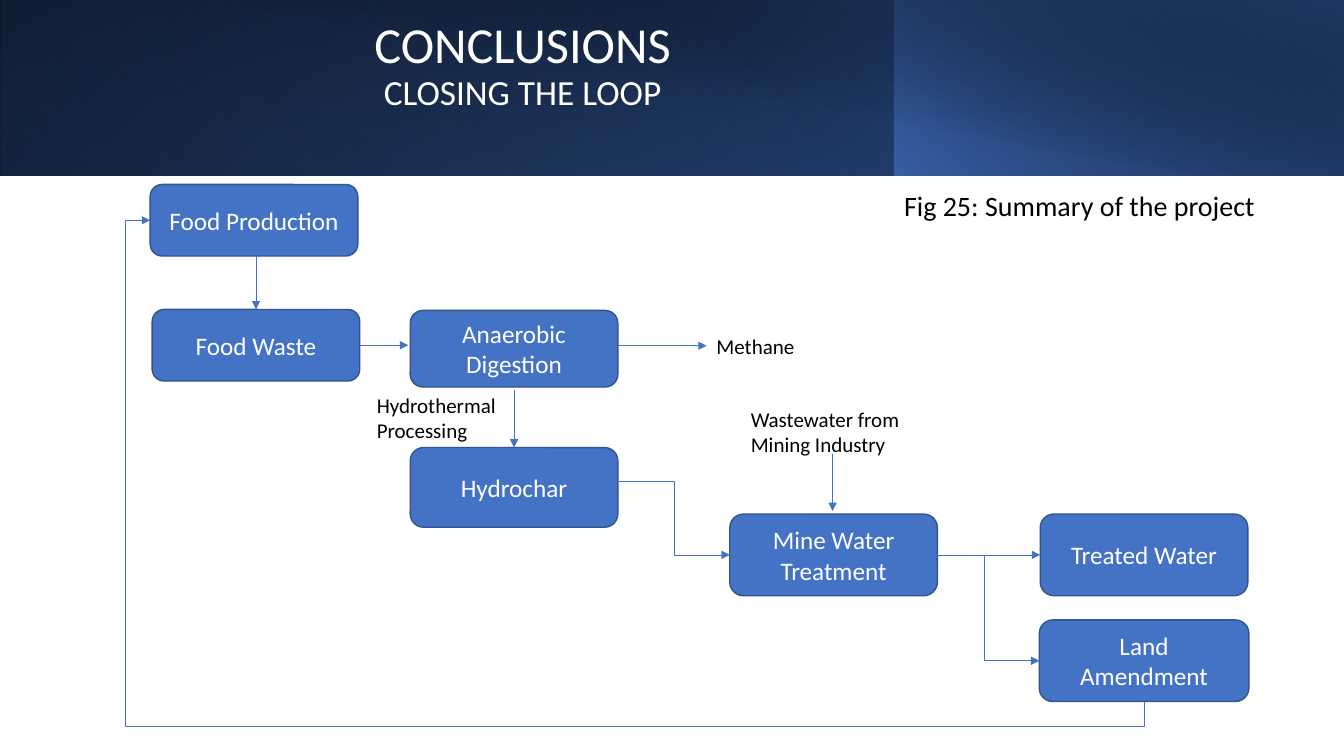
from lxml.etree import SubElement
from pptx import Presentation
from pptx.dml.color import RGBColor
from pptx.enum.shapes import MSO_CONNECTOR as LINK, MSO_SHAPE as SHAPE
from pptx.enum.text import MSO_ANCHOR as ANCHOR, PP_ALIGN as ALIGN
from pptx.oxml.ns import qn
from pptx.util import Inches, Pt

CELL = Inches(0.1)
COLUMNS, ROWS, BANNER_ROWS = 133.33, 75, 17.4
TOP, LEFT, BOTTOM, RIGHT = range(4)
BLUE, OUTLINE, NAVY, WHITE, BLACK = "4472C4", "325491", "203864", "FFFFFF", "000000"


def color(value):
    """Turn a hex string into a colour."""
    return RGBColor.from_string(value)


def place(region, column, row, *size):
    """Turn grid cells inside a region into slide lengths."""
    cells = (region[0] + column, region[1] + row, *size)
    return [round(cell * CELL) for cell in cells]


def write(shape, lines, ink, align=ALIGN.LEFT, anchor=ANCHOR.TOP, **spacing):
    """Fill a shape with lines of text given with their sizes."""
    frame = shape.text_frame
    frame.word_wrap = True
    frame.vertical_anchor = anchor
    for number, (words, size) in enumerate(lines):
        paragraph = frame.add_paragraph() if number else frame.paragraphs[0]
        for key, value in {"alignment": align, **spacing}.items():
            setattr(paragraph, key, value)
        run = paragraph.add_run()
        run.text = words
        for key, value in {"name": "Calibri", "size": Pt(size)}.items():
            setattr(run.font, key, value)
        run.font.color.rgb = color(ink)


def add_gradient(shape, stops, angle):
    """Replace the fill of a shape with a gradient of (place, colour, opacity) stops."""
    shape.fill.background()
    properties = shape._element.spPr
    empty = properties.find(qn("a:noFill"))
    gradient = SubElement(properties, qn("a:gradFill"), rotWithShape="1")
    stop_list = SubElement(gradient, qn("a:gsLst"))
    for position, tint, opacity in stops:
        stop = SubElement(stop_list, qn("a:gs"), pos=str(position * 1000))
        tone = SubElement(stop, qn("a:srgbClr"), val=tint)
        if opacity < 100:
            SubElement(tone, qn("a:alpha"), val=str(opacity * 1000))
    SubElement(gradient, qn("a:lin"), ang=str(angle * 60000), scaled="0")
    properties.replace(empty, gradient)


def add_banner(shapes, region):
    """Draw the layered gradient banner with its title."""
    split = 88.75
    layers = [
        (0, COLUMNS, 0, True, 140, [(0, BLACK, 100), (100, "2F5597", 100)]),
        (0, split, 180, True, 230, [(20, BLUE, 0), (100, NAVY, 55)]),
        (split, COLUMNS - split, 0, True, 220, [(0, BLUE, 66), (100, BLACK, 30)]),
        (5, COLUMNS - 5, 0, False, 280, [(50, BLACK, 0), (99, NAVY, 52)]),
    ]
    for column, width, turn, mirrored, angle, stops in layers:
        layer = shapes.add_shape(SHAPE.RECTANGLE, *place(region, column, 0, width, BANNER_ROWS))
        layer.shadow.inherit = False
        layer.line.fill.background()
        layer.rotation = turn
        if mirrored:
            layer._element.spPr.xfrm.set("flipH", "1")
        add_gradient(layer, stops, angle)
    title = shapes.add_textbox(*place(region, 15, 1.5, 73.7, 14.5))
    write(title, [("CONCLUSIONS", 36), ("CLOSING THE LOOP", 25.2)], WHITE, ALIGN.CENTER,
          line_spacing=0.9, space_before=Pt(0))


def add_step(shapes, region, words, column, row, height, width=20.6):
    """Draw one rounded step of the process."""
    step = shapes.add_shape(SHAPE.ROUNDED_RECTANGLE, *place(region, column, row, width, height))
    step.shadow.inherit = False
    step.fill.solid()
    step.fill.fore_color.rgb = color(BLUE)
    step.line.color.rgb = color(OUTLINE)
    step.line.width = Pt(1)
    write(step, [(words, 18)], WHITE, ALIGN.CENTER, ANCHOR.MIDDLE)
    return step


def add_arrow(shapes, region, start, end, kind=LINK.STRAIGHT):
    """Draw an arrow between ends that are grid cells or (step, side) pairs."""
    ends = [(0, 0) if hasattr(spot[0], "left") else place(region, *spot) for spot in (start, end)]
    arrow = shapes.add_connector(kind, *ends[0], *ends[1])
    for spot, join in ((start, arrow.begin_connect), (end, arrow.end_connect)):
        if hasattr(spot[0], "left"):
            join(*spot)
    arrow.line.color.rgb = color(BLUE)
    arrow.line.width = Pt(0.5)
    SubElement(arrow.line._get_or_add_ln(), qn("a:tailEnd"), type="triangle")
    SubElement(arrow._element.spPr, qn("a:effectLst"))
    return arrow


def bend_around(arrow):
    """Route an arrow below its start and left of its end."""
    across, down = arrow.width, arrow.height
    middle_x = arrow.left + across // 2
    middle_y = arrow.top + down // 2
    frame = {"left": middle_x - down // 2, "top": middle_y - across // 2,
             "width": down, "height": across}
    for key, value in frame.items():
        setattr(arrow, key, value)
    properties = arrow._element.spPr
    properties.xfrm.attrib.pop("flipV", None)
    for key, value in {"rot": "5400000", "flipH": "1"}.items():
        properties.xfrm.set(key, value)
    geometry = properties.find(qn("a:prstGeom"))
    geometry.set("prst", "bentConnector4")
    guides = geometry.find(qn("a:avLst"))
    for name, value in {"adj1": -5200, "adj2": 102500}.items():
        SubElement(guides, qn("a:gd"), name=name, fmla=f"val {value}")


def add_flow(shapes, region):
    """Draw the steps, labels and arrows of the project loop."""
    waste = add_step(shapes, region, "Food Waste", 15.1, 13.3, 7.1)
    add_step(shapes, region, "Anaerobic Digestion", 40.7, 13.4, 7.6)
    hydrochar = add_step(shapes, region, "Hydrochar", 40.7, 27, 7.9)
    treatment = add_step(shapes, region, "Mine Water Treatment", 72.4, 33.6, 8.1)
    treated = add_step(shapes, region, "Treated Water", 103.2, 33.6, 8.1)
    land = add_step(shapes, region, "Land Amendment", 103.1, 44.1, 8.1, 20.8)
    production = add_step(shapes, region, "Food Production", 14.9, 0.9, 7.1)

    labels = [
        ("Fig 25: Summary of the project", 20, 88.7, 0.8, 38.3, 4.4),
        ("Methane", 15, 70.1, 15.2, 11.3, 3.5),
        ("Hydrothermal Processing", 15, 36.4, 21, 15.9, 6.1),
        ("Wastewater from Mining Industry", 15, 73.5, 22.4, 18.7, 6.1),
    ]
    for words, size, *box in labels:
        write(shapes.add_textbox(*place(region, *box)), [(words, size)], BLACK)

    links = [
        ((25.4, 8), (waste, TOP)),
        ((waste, RIGHT), (40.5, 16.85)),
        ((61.3, 16.9), (70.1, 16.9)),
        ((51, 21.3), (hydrochar, TOP)),
        ((82.6, 27.6), (82.6, 33.3)),
        ((treatment, RIGHT), (treated, LEFT)),
        ((61.4, 30.4), (treatment, LEFT), LINK.ELBOW),
        ((92.2, 37.65), (land, LEFT), LINK.ELBOW),
    ]
    for link in links:
        add_arrow(shapes, region, *link)
    bend_around(add_arrow(shapes, region, (land, BOTTOM), (production, LEFT), LINK.ELBOW))


def main():
    """Build the slide and save it."""
    deck = Presentation()
    deck.slide_width, deck.slide_height = round(COLUMNS * CELL), ROWS * CELL
    slide = deck.slides.add_slide(deck.slide_layouts[6])
    add_banner(slide.shapes, (0, 0))
    add_flow(slide.shapes, (0, BANNER_ROWS))
    deck.save("out.pptx")


if __name__ == "__main__":
    main()
